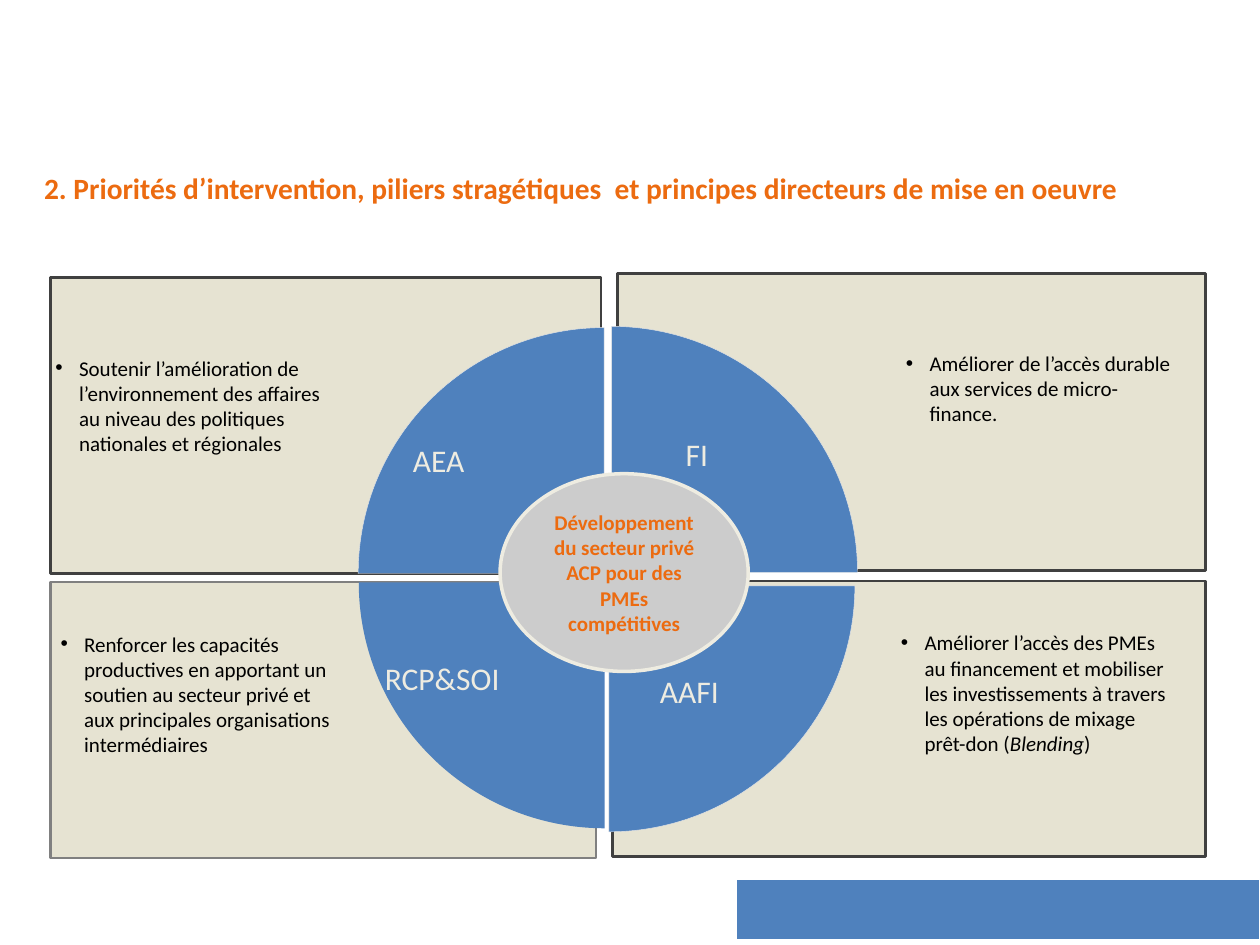
import pptx
import pptx.util
from lxml import etree
from pptx.dml.color import RGBColor
from pptx.enum.shapes import MSO_SHAPE
from pptx.enum.text import MSO_ANCHOR, PP_ALIGN
from pptx.oxml.ns import qn

Pt = pptx.util.Pt

ORANGE = RGBColor(0xEC, 0x6B, 0x10)
BLUE = RGBColor(0x4F, 0x81, 0xBD)
BEIGE = RGBColor(0xE6, 0xE3, 0xD2)
CREAM = RGBColor(0xEE, 0xEC, 0xE1)
LIGHT_GREY = RGBColor(0xE6, 0xE6, 0xE6)
SILVER = RGBColor(0xCC, 0xCC, 0xCC)
GREY = RGBColor(0x80, 0x80, 0x80)
DARK_GREY = RGBColor(0x40, 0x40, 0x40)
BLACK = RGBColor(0, 0, 0)

WEDGE_SIZE = 140.5
LABEL_SIZE = (121, 25)
PILLAR_WIDTH = 161.5

PANELS = [
    (28.8, 158.4, 314.6, 169.2, DARK_GREY),
    (352.8, 156.2, 336.2, 169.9, DARK_GREY),
    (28.8, 332.6, 311.8, 157.7, GREY),
    (349.9, 331.9, 339.1, 157.7, DARK_GREY),
]
WEDGES = [
    (204.7, 187.2, 0, LIGHT_GREY),
    (349.5, 186.5, 90, LIGHT_GREY),
    (348, 334.8, 180, LIGHT_GREY),
    (205, 332.8, 270, None),
]
LABELS = [
    ("AEA", 190.1, 252),
    ("FI", 337.7, 248.4),
    ("RCP&SOI", 192.2, 376.6),
    ("AAFI", 333.4, 383.8),
]
PILLARS = [
    (28.1, 199.4, 65.5, [
        ("Soutenir l’amélioration de l’environnement des affaires au niveau "
         "des politiques nationales et régionales", False)]),
    (514.1, 196.6, 51, [
        ("Améliorer de l’accès durable aux services de micro-finance.", False)]),
    (31, 357.1, 80, [
        ("Renforcer les capacités productives en apportant un soutien au "
         "secteur privé et aux principales organisations intermédiaires", False)]),
    (511.2, 356.4, 80, [
        ("Améliorer l’accès des PMEs au financement et mobiliser les "
         "investissements à travers les opérations de mixage prêt-don (", False),
        ("Blending", True),
        (")", False)]),
]


def add_run(paragraph, text, size, color, bold=False, italic=False):
    run = paragraph.add_run()
    run.text = text
    font = run.font
    font.name = "Calibri"
    font.size = Pt(size)
    font.color.rgb = color
    font.bold = bold
    font.italic = italic


def set_frame(frame, anchor, left, top, right, bottom):
    frame.word_wrap = True
    frame.vertical_anchor = anchor
    frame.margin_left, frame.margin_top = Pt(left), Pt(top)
    frame.margin_right, frame.margin_bottom = Pt(right), Pt(bottom)


def add_title(slide, text):
    title = slide.shapes.title
    title.left, title.top = Pt(25.2), Pt(93.6)
    title.width, title.height = Pt(663.1), Pt(40.3)
    set_frame(title.text_frame, MSO_ANCHOR.TOP, 0, 3.6, 0, 3.6)
    paragraph = title.text_frame.paragraphs[0]
    paragraph.alignment = PP_ALIGN.LEFT
    add_run(paragraph, text, 16.8, ORANGE, bold=True)


def add_filled(slide, preset, left, top, width, height, fill, line, weight):
    shape = slide.shapes.add_shape(preset, Pt(left), Pt(top), Pt(width), Pt(height))
    shape.shadow.inherit = False
    shape.fill.solid()
    shape.fill.fore_color.rgb = fill
    if line is None:
        shape.line.fill.background()
    else:
        shape.line.color.rgb = line
        shape.line.width = Pt(weight)
    return shape


def add_wedge(slide, left, top, angle, line):
    wedge = add_filled(slide, MSO_SHAPE.PIE_WEDGE, left, top,
                       WEDGE_SIZE, WEDGE_SIZE, BLUE, line, 0.25)
    wedge.rotation = angle


def add_core(slide, text):
    core = add_filled(slide, MSO_SHAPE.OVAL, 285.8, 270.7, 141.8, 113,
                      SILVER, CREAM, 2)
    set_frame(core.text_frame, MSO_ANCHOR.MIDDLE, 7.2, 3.6, 7.2, 3.6)
    paragraph = core.text_frame.paragraphs[0]
    paragraph.alignment = PP_ALIGN.CENTER
    add_run(paragraph, text, 12, ORANGE, bold=True)


def add_label(slide, text, left, top):
    width, height = LABEL_SIZE
    label = slide.shapes.add_textbox(Pt(left), Pt(top), Pt(width), Pt(height))
    set_frame(label.text_frame, MSO_ANCHOR.TOP, 0, 0, 0, 3.6)
    paragraph = label.text_frame.paragraphs[0]
    paragraph.alignment = PP_ALIGN.CENTER
    add_run(paragraph, text, 18, CREAM)


def add_bullet(paragraph, indent):
    properties = paragraph._p.get_or_add_pPr()
    properties.set("marL", str(Pt(indent)))
    properties.set("indent", str(-Pt(indent)))
    color = etree.SubElement(properties, qn("a:buClr"))
    etree.SubElement(color, qn("a:srgbClr")).set("val", str(BLACK))
    etree.SubElement(properties, qn("a:buFont")).set("typeface", "Arial")
    etree.SubElement(properties, qn("a:buChar")).set("char", "•")


def add_pillar(slide, left, top, height, runs):
    pillar = slide.shapes.add_textbox(Pt(left), Pt(top), Pt(PILLAR_WIDTH), Pt(height))
    set_frame(pillar.text_frame, MSO_ANCHOR.TOP, 3.6, 3.6, 3.6, 3.6)
    paragraph = pillar.text_frame.paragraphs[0]
    add_bullet(paragraph, 13.5)
    for text, italic in runs:
        add_run(paragraph, text, 12, BLACK, italic=italic)


def add_footer_band(slide):
    frame = slide.shapes.add_table(1, 1, Pt(420.5), Pt(502.6), Pt(299.5), Pt(35.3))
    cell = frame.table.cell(0, 0)
    properties = cell._tc.get_or_add_tcPr()
    for side, weight in (("L", 1), ("R", 1), ("T", 1), ("B", 3)):
        border = etree.SubElement(properties, qn("a:ln" + side))
        border.set("w", str(Pt(weight)))
        fill = etree.SubElement(border, qn("a:solidFill"))
        etree.SubElement(fill, qn("a:srgbClr")).set("val", "FFFFFF")
    cell.fill.solid()
    cell.fill.fore_color.rgb = BLUE


def main():
    deck = pptx.Presentation()
    deck.slide_width, deck.slide_height = Pt(720), Pt(540)
    slide = deck.slides.add_slide(deck.slide_layouts[5])
    add_title(slide, "2. Priorités d’intervention, piliers stragétiques  "
                     "et principes directeurs de mise en oeuvre")
    for left, top, width, height, line in PANELS:
        add_filled(slide, MSO_SHAPE.RECTANGLE, left, top, width, height,
                   BEIGE, line, 1.5)
    for wedge in WEDGES:
        add_wedge(slide, *wedge)
    add_core(slide, "Développement du secteur privé ACP pour des PMEs compétitives")
    for label in LABELS:
        add_label(slide, *label)
    for pillar in PILLARS:
        add_pillar(slide, *pillar)
    add_footer_band(slide)
    deck.save("out.pptx")


if __name__ == "__main__":
    main()
